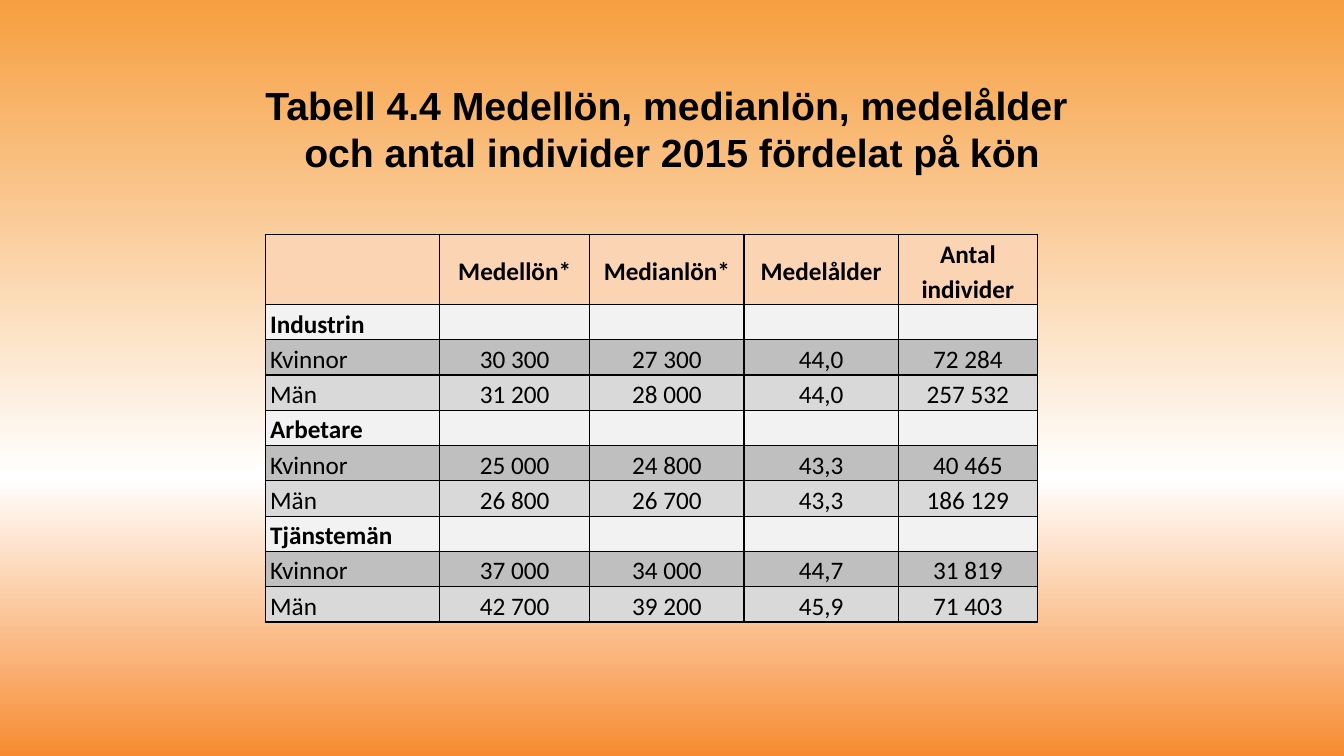
from copy import deepcopy
from dataclasses import dataclass

from lxml.etree import SubElement
from pptx import Presentation
from pptx.dml.color import RGBColor as Rgb
from pptx.enum.text import MSO_ANCHOR as Anchor, PP_ALIGN as Align
from pptx.oxml.ns import qn
from pptx.util import Inches, Pt

COLORS = {
    "text": "000000", "border": "000000", "header": "FBD4B4",
    "group": "F2F2F2", "women": "BFBFBF", "men": "D9D9D9",
    "top": "F69F40", "glow": "FFFFFF", "bottom": "F78B31",
}
TITLE_LINES = ["Tabell 4.4 Medellön, medianlön, medelålder ",
               "och antal individer 2015 fördelat på kön"]
TITLE_FONT = {"name": "Arial", "size": Pt(28), "bold": True}
TABLE_FONT = {"name": "Calibri", "size": Pt(18)}
CELL_MARGINS = {"margin_left": Inches(0.05), "margin_right": Inches(0.05),
                "margin_top": 0, "margin_bottom": 0}
COLUMN_WIDTHS = [1.73, 1.49, 1.53, 1.53, 1.38]
HEADER_HEIGHT, ROW_HEIGHT = 0.65, 0.35


@dataclass
class SalaryRow:
    kind: str
    texts: list[str]

    @property
    def bold(self) -> bool:
        return self.kind in ("header", "group")


def group(name: str, women: list[str], men: list[str]) -> list[SalaryRow]:
    return [SalaryRow("group", [name, "", "", "", ""]),
            SalaryRow("women", ["Kvinnor", *women]),
            SalaryRow("men", ["Män", *men])]


ROWS = [
    SalaryRow("header", ["", "Medellön*", "Medianlön*", "Medelålder", "Antal\nindivider"]),
    *group("Industrin", ["30 300", "27 300", "44,0", "72 284"],
           ["31 200", "28 000", "44,0", "257 532"]),
    *group("Arbetare", ["25 000", "24 800", "43,3", "40 465"],
           ["26 800", "26 700", "43,3", "186 129"]),
    *group("Tjänstemän", ["37 000", "34 000", "44,7", "31 819"],
           ["42 700", "39 200", "45,9", "71 403"]),
]


def color(name: str) -> Rgb:
    return Rgb.from_string(COLORS[name])


def set_all(target, values: dict) -> None:
    for name, value in values.items():
        setattr(target, name, value)


def paint_background(slide) -> None:
    fill = slide.background.fill
    fill.gradient()
    fill.gradient_angle = 90
    stop_list = next(slide.element.iter(qn("a:gsLst")))
    stop_list.insert(1, deepcopy(stop_list[0]))
    stops = [("bottom", 0), ("glow", 0.37), ("top", 1)]
    for stop, (name, position) in zip(fill.gradient_stops, stops):
        stop.color.rgb = color(name)
        stop.position = position


def add_title(slide) -> None:
    shape = slide.shapes.add_textbox(Inches(1.25), Inches(0.67), Inches(10.83), Inches(2.15))
    set_all(shape.text_frame, {"word_wrap": True, "vertical_anchor": Anchor.TOP,
                               "margin_top": Inches(0.14)})
    paragraph = shape.text_frame.paragraphs[0]
    paragraph.alignment = Align.CENTER
    paragraph.text = "\v".join(TITLE_LINES)
    for run in paragraph.runs:
        set_all(run.font, TITLE_FONT)
        run.font.color.rgb = color("text")


def add_borders(cell) -> None:
    properties = cell._tc.get_or_add_tcPr()
    for side in ("lnL", "lnR", "lnT", "lnB"):
        line = SubElement(properties, qn(f"a:{side}"), w=str(Pt(1)))
        solid = SubElement(line, qn("a:solidFill"))
        SubElement(solid, qn("a:srgbClr"), val=COLORS["border"])


def fill_cell(cell, row: SalaryRow, text: str, is_label: bool) -> None:
    add_borders(cell)
    cell.fill.solid()
    cell.fill.fore_color.rgb = color(row.kind)
    set_all(cell, CELL_MARGINS)
    cell.vertical_anchor = Anchor.MIDDLE if row.kind == "header" else Anchor.TOP
    cell.text = text
    for paragraph in cell.text_frame.paragraphs:
        paragraph.alignment = Align.JUSTIFY if is_label else Align.CENTER
        paragraph.line_spacing = 1.15
        for run in paragraph.runs:
            set_all(run.font, {**TABLE_FONT, "bold": row.bold})
            run.font.color.rgb = color("text")


def add_salary_table(slide) -> None:
    height = HEADER_HEIGHT + ROW_HEIGHT * (len(ROWS) - 1)
    table = slide.shapes.add_table(
        len(ROWS), len(COLUMN_WIDTHS), Inches(2.63), Inches(2.33),
        Inches(sum(COLUMN_WIDTHS)), Inches(height)).table
    set_all(table, {"first_row": False, "horz_banding": False})
    for column, width in zip(table.columns, COLUMN_WIDTHS):
        column.width = Inches(width)
    for row_index, row in enumerate(ROWS):
        row_height = HEADER_HEIGHT if row.kind == "header" else ROW_HEIGHT
        table.rows[row_index].height = Inches(row_height)
        for column_index, text in enumerate(row.texts):
            fill_cell(table.cell(row_index, column_index), row, text, column_index == 0)


def main() -> None:
    presentation = Presentation()
    presentation.slide_width, presentation.slide_height = Inches(13.33), Inches(7.5)
    slide = presentation.slides.add_slide(presentation.slide_layouts[6])
    paint_background(slide)
    add_title(slide)
    add_salary_table(slide)
    presentation.save("out.pptx")


if __name__ == "__main__":
    main()
